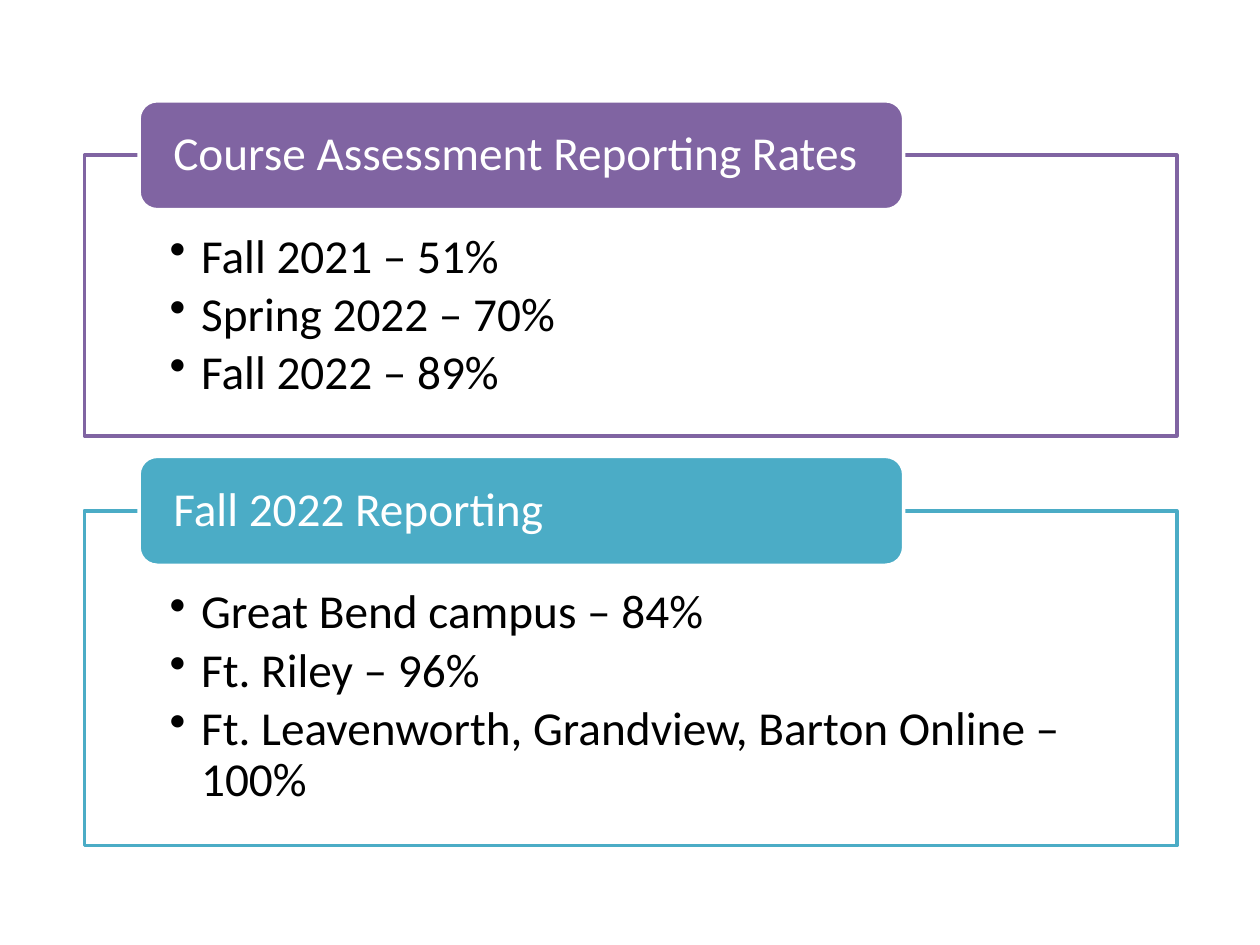
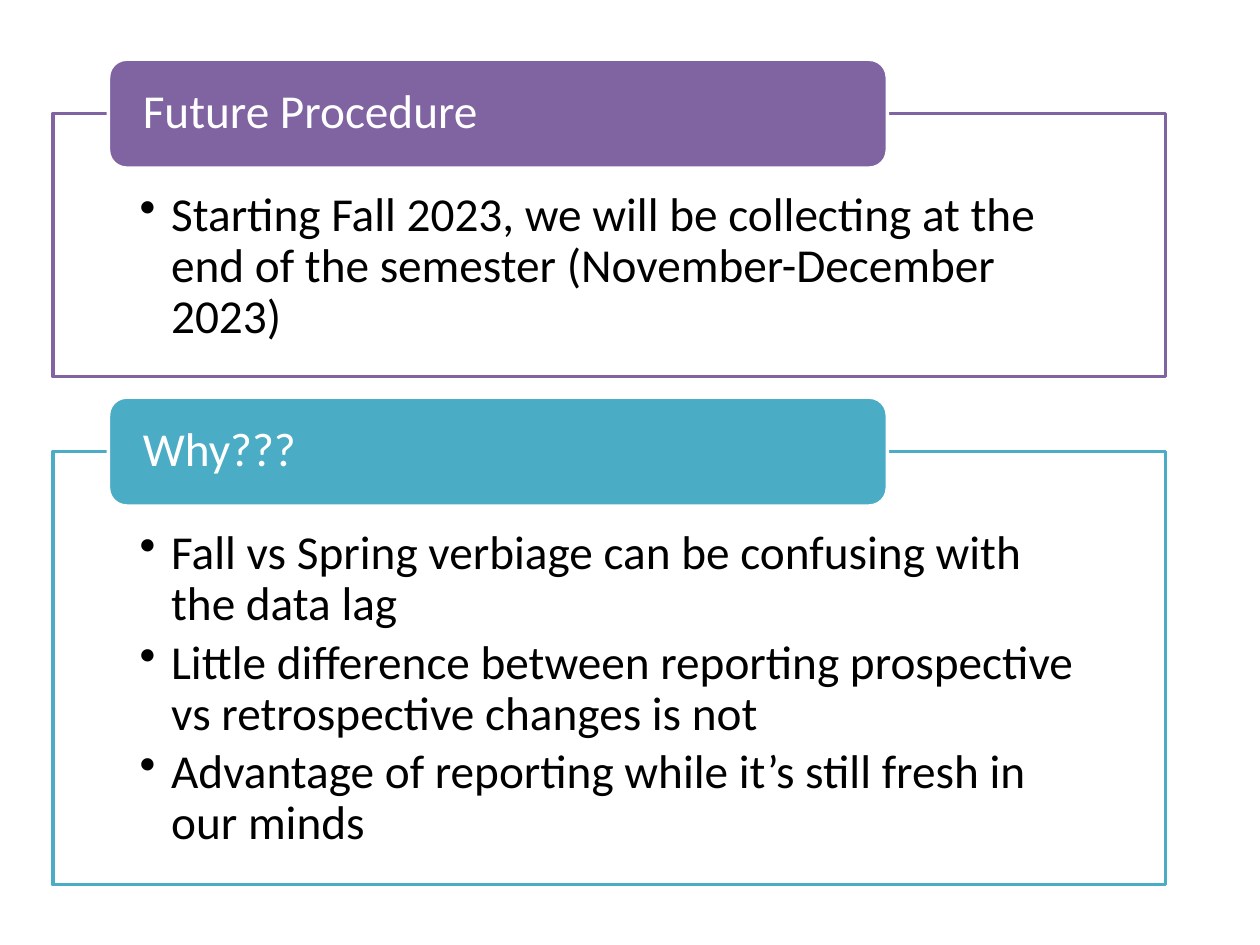
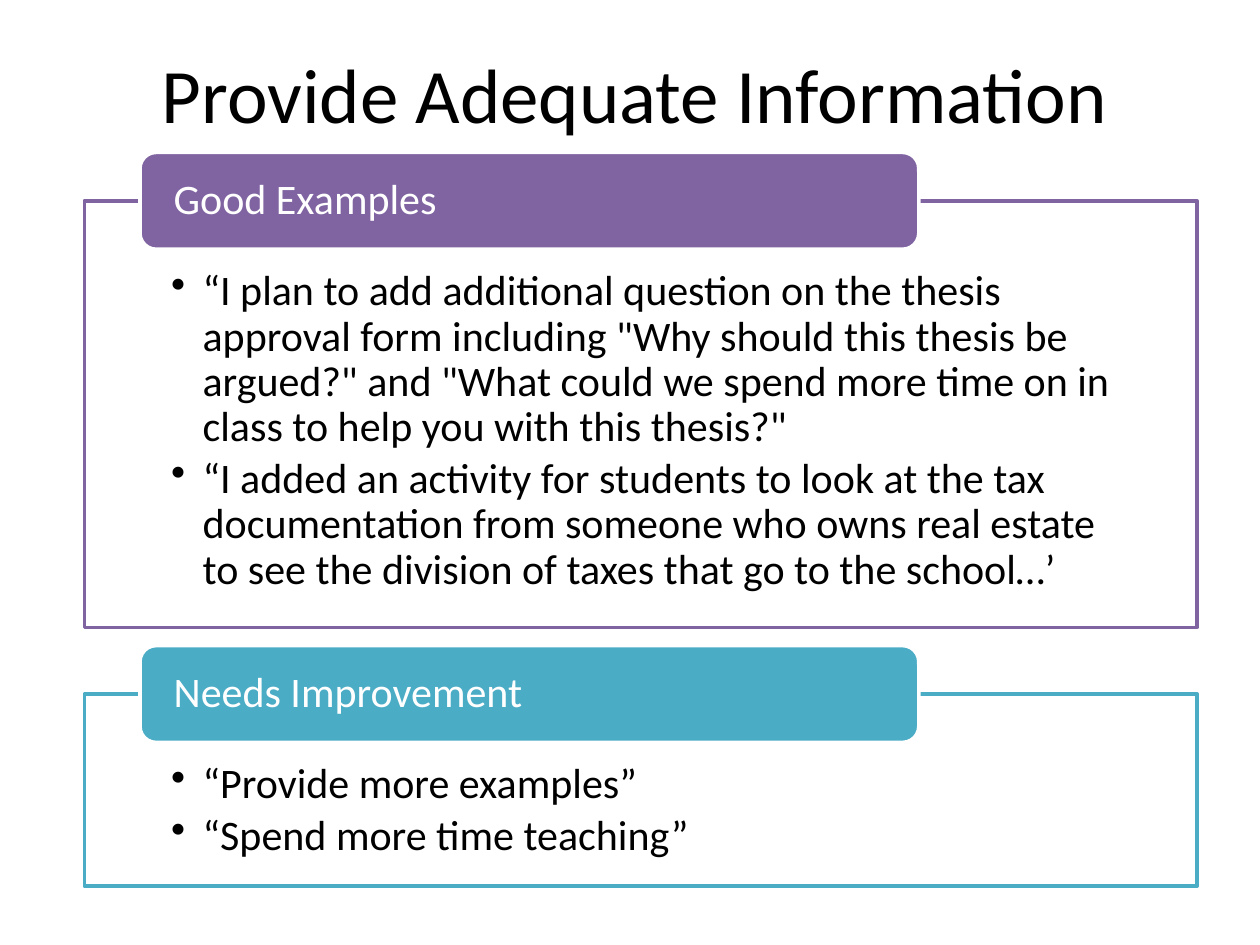
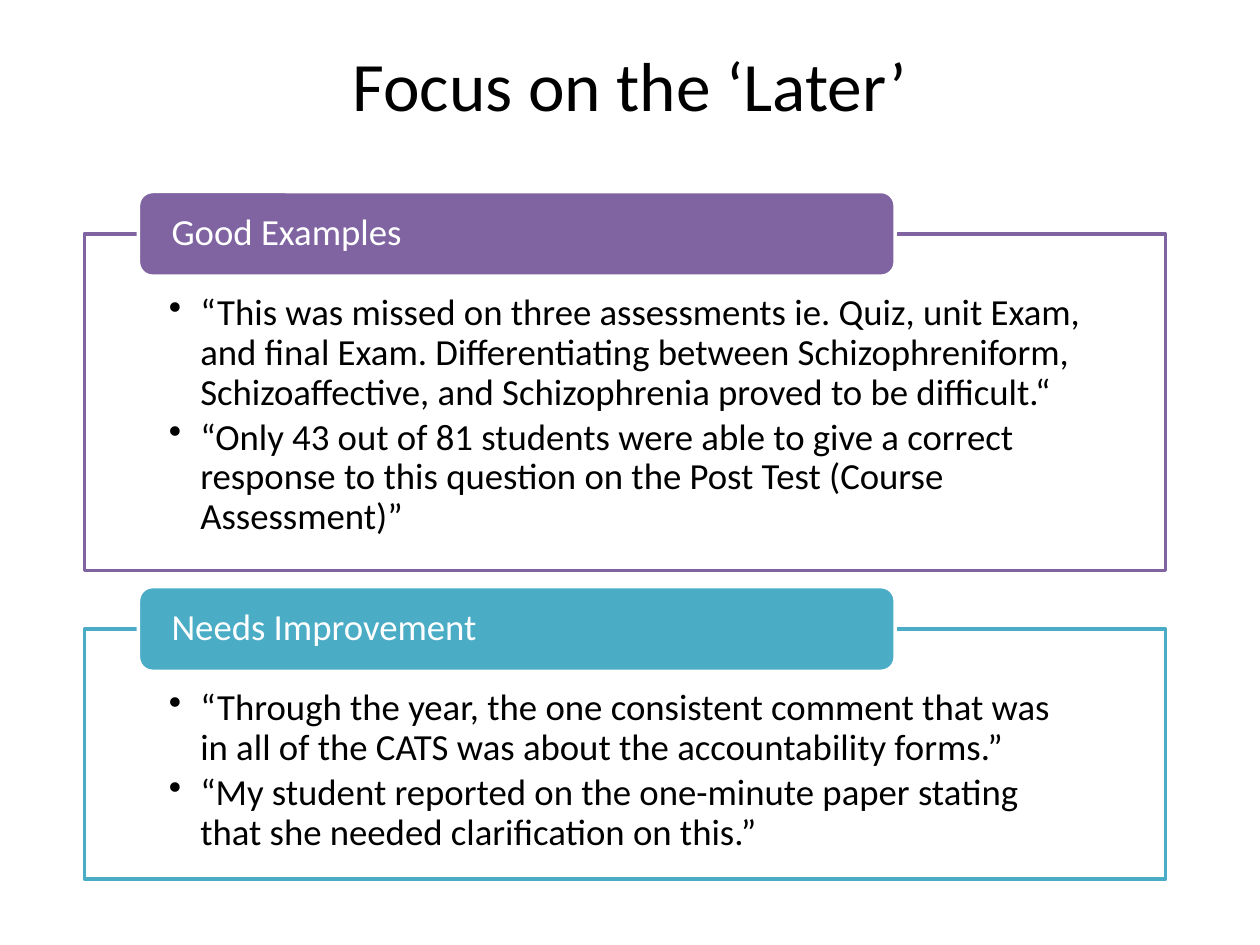
"""Build four assessment-reporting slides made of titled, outlined panels."""
from dataclasses import dataclass

from lxml import etree
from pptx import Presentation
from pptx.dml.color import RGBColor
from pptx.enum.shapes import MSO_SHAPE
from pptx.enum.text import MSO_ANCHOR, PP_ALIGN
from pptx.oxml.ns import qn
from pptx.util import Inches, Pt

RECTANGLE = MSO_SHAPE.RECTANGLE
ROUNDED = MSO_SHAPE.ROUNDED_RECTANGLE
LEFT, CENTER = PP_ALIGN.LEFT, PP_ALIGN.CENTER
TOP, MIDDLE = MSO_ANCHOR.TOP, MSO_ANCHOR.MIDDLE
TITLE_ONLY, BLANK = 5, 6


@dataclass(frozen=True)
class Theme:
    """Colours and type sizes shared by the slides."""

    font: str = "Calibri"
    white: RGBColor = RGBColor(0xFF, 0xFF, 0xFF)
    ink: RGBColor = RGBColor(0x00, 0x00, 0x00)
    accents: tuple = (RGBColor(0x80, 0x64, 0xA2), RGBColor(0x4B, 0xAC, 0xC6))
    title: float = 44
    title_small: float = 39.6
    large: int = 27
    medium: int = 24
    small: int = 21
    outline: int = 2


THEME = Theme()


def write(paragraph, text, size, color, align=LEFT):
    """Add one formatted run to an aligned paragraph."""
    paragraph.alignment = align
    run = paragraph.add_run()
    run.text = text
    run.font.name = THEME.font
    run.font.size = Pt(size)
    run.font.color.rgb = color


def add_box(slide, preset, box, fill, line, anchor, insets):
    """Add an outlined shape and return it ready for text."""
    shape = slide.shapes.add_shape(preset, *map(Inches, box))
    shape.shadow.inherit = False
    shape.fill.solid()
    shape.fill.fore_color.rgb = fill
    shape.line.color.rgb = line
    shape.line.width = Pt(THEME.outline)
    frame = shape.text_frame
    frame.word_wrap = True
    frame.vertical_anchor = anchor
    (frame.margin_left, frame.margin_top,
     frame.margin_right, frame.margin_bottom) = map(Inches, insets)
    return shape


def set_opacity(shape, percent):
    """Make the solid fill of a shape partly transparent."""
    color = shape._element.spPr.find(qn("a:solidFill"))[0]
    etree.SubElement(color, qn("a:alpha")).set("val", str(percent * 1000))


def add_bullet(paragraph, text, size):
    """Write one hanging bullet item."""
    properties = paragraph._p.get_or_add_pPr()
    properties.set("marL", str(Inches(0.25)))
    properties.set("indent", str(-Inches(0.25)))
    etree.SubElement(properties, qn("a:buChar")).set("char", "•")
    paragraph.level = 1
    paragraph.line_spacing = 0.9
    paragraph.space_after = Pt(0.15 * size)
    write(paragraph, text, size, THEME.ink)


def add_panel(slide, box, heading, items, size, accent):
    """Draw a bulleted frame whose heading tab straddles its top edge."""
    left, top, width, height = box
    tab_height = 0.032 * size
    side = 0.078 * width
    frame = add_box(
        slide, RECTANGLE,
        (left, top + tab_height / 2, width, height - tab_height / 2),
        THEME.white, accent, TOP,
        (side, 0.71 * tab_height, side, 0.24 * tab_height))
    set_opacity(frame, 90)
    for index, item in enumerate(items):
        text = frame.text_frame
        add_bullet(text.add_paragraph() if index else text.paragraphs[0], item, size)

    tab = add_box(
        slide, ROUNDED, (left + 0.05 * width, top, 0.7 * width, tab_height),
        accent, THEME.white, MIDDLE, (0.23, 0, 0.23, 0))
    label = tab.text_frame.paragraphs[0]
    label.line_spacing = 0.9
    write(label, heading, size, THEME.white)


def add_panels(slide, origin, width, size, panels):
    """Stack panels of (height, heading, items) with equal gaps."""
    left, top = origin
    for accent, (height, heading, items) in zip(THEME.accents, panels):
        add_panel(slide, (left, top, width, height), heading, items, size, accent)
        top += height + 0.006 * size


def add_title(slide, box, text, size):
    """Place and fill the title placeholder."""
    title = slide.shapes.title
    title.left, title.top, title.width, title.height = map(Inches, box)
    title.text_frame.vertical_anchor = MIDDLE
    write(title.text_frame.paragraphs[0], text, size, THEME.ink, CENTER)


def build_reporting_rates(deck):
    """Build the slide of reporting rates."""
    slide = deck.slides.add_slide(deck.slide_layouts[BLANK])
    add_panels(slide, (0.67, 0.8), 8.67, THEME.large, [
        (2.66, "Course Assessment Reporting Rates", [
            "Fall 2021 – 51%",
            "Spring 2022 – 70%",
            "Fall 2022 – 89%",
        ]),
        (3.09, "Fall 2022 Reporting", [
            "Great Bend campus – 84%",
            "Ft. Riley – 96%",
            "Ft. Leavenworth, Grandview, Barton Online – 100%",
        ]),
    ])


def build_future_procedure(deck):
    """Build the slide on the new collection schedule."""
    slide = deck.slides.add_slide(deck.slide_layouts[BLANK])
    add_panels(slide, (0.42, 0.47), 8.83, THEME.large, [
        (2.52, "Future Procedure", [
            "Starting Fall 2023, we will be collecting at the end of the "
            "semester (November-December 2023)",
        ]),
        (3.87, "Why???", [
            "Fall vs Spring verbiage can be confusing with the data lag",
            "Little difference between reporting prospective vs "
            "retrospective changes is not",
            "Advantage of reporting while it’s still fresh in our minds",
        ]),
    ])


def build_adequate_information(deck):
    """Build the slide of examples of adequate information."""
    slide = deck.slides.add_slide(deck.slide_layouts[TITLE_ONLY])
    add_panels(slide, (0.67, 1.21), 8.83, THEME.medium, [
        (3.77, "Good Examples", [
            "“I plan to add additional question on the thesis approval form "
            "including \"Why should this thesis be argued?\" and \"What could "
            "we spend more time on in class to help you with this thesis?\"",
            "“I added an activity for students to look at the tax "
            "documentation from someone who owns real estate to see the "
            "division of taxes that go to the school…’",
        ]),
        (1.91, "Needs Improvement", [
            "“Provide more examples”",
            "“Spend more time teaching”",
        ]),
    ])
    add_title(slide, (0.5, 0.3, 9.08, 0.87), "Provide Adequate Information", THEME.title)


def build_focus_on_later(deck):
    """Build the slide of examples that focus on later results."""
    slide = deck.slides.add_slide(deck.slide_layouts[TITLE_ONLY])
    add_panels(slide, (0.67, 1.52), 8.58, THEME.small, [
        (3.01, "Good Examples", [
            "“This was missed on three assessments ie. Quiz, unit Exam, and "
            "final Exam. Differentiating between Schizophreniform, "
            "Schizoaffective, and Schizophrenia proved to be difficult.“",
            "“Only 43 out of 81 students were able to give a correct response "
            "to this question on the Post Test (Course Assessment)”",
        ]),
        (2.32, "Needs Improvement", [
            "“Through the year, the one consistent comment that was in all of "
            "the CATS was about the accountability forms.”",
            "“My student reported on the one-minute paper stating that she "
            "needed clarification on this.”",
        ]),
    ])
    add_title(slide, (0.5, 0.3, 9, 0.73), "Focus on the ‘Later’", THEME.title_small)


def main():
    """Build and save the presentation."""
    deck = Presentation()
    deck.slide_width, deck.slide_height = Inches(10), Inches(7.5)
    build_reporting_rates(deck)
    build_future_procedure(deck)
    build_adequate_information(deck)
    build_focus_on_later(deck)
    deck.save("out.pptx")


if __name__ == "__main__":
    main()
